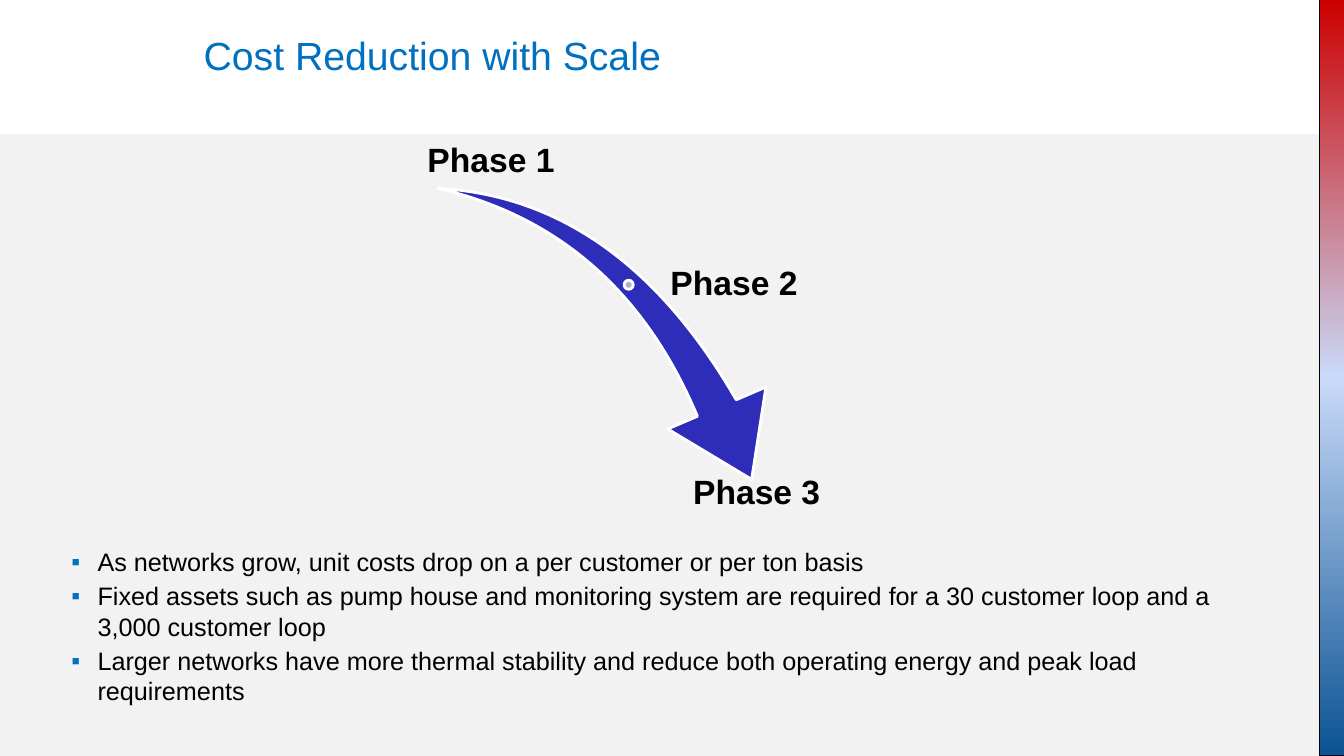
from copy import deepcopy
from dataclasses import dataclass

from lxml.etree import SubElement
from pptx import Presentation
from pptx.dml.color import RGBColor
from pptx.enum.shapes import MSO_SHAPE as Shape
from pptx.enum.text import MSO_ANCHOR as Anchor, MSO_AUTO_SIZE as AutoSize, PP_ALIGN as Align
from pptx.oxml.ns import qn
from pptx.util import Inches, Pt

BLACK = RGBColor(0x00, 0x00, 0x00)
WHITE = RGBColor(0xFF, 0xFF, 0xFF)
GREY = RGBColor(0xF2, 0xF2, 0xF2)
BLUE = RGBColor(0x00, 0x70, 0xC0)
ARROW = RGBColor(0x2D, 0x2D, 0xB9)
DOT = RGBColor(0xAD, 0xAD, 0xD9)
STRIPE = ((0, RGBColor(0xCC, 0x00, 0x00)),
          (0.5, RGBColor(0xC9, 0xDA, 0xF8)),
          (1, RGBColor(0x0B, 0x53, 0x94)))

Box = tuple[float, float, float, float]


@dataclass
class Phase:
    text: str
    box: Box
    anchor: Anchor
    align: Align


PHASES = (
    Phase("Phase 1", (4.01, 1.13, 1.72, 0.68), Anchor.BOTTOM, Align.CENTER),
    Phase("Phase 2", (6.62, 2.48, 2.05, 0.68), Anchor.MIDDLE, Align.LEFT),
    Phase("Phase 3", (6.34, 4.69, 2.33, 0.68), Anchor.TOP, Align.CENTER),
)
POINTS = (
    "As networks grow, unit costs drop on a per customer or per ton basis",
    "Fixed assets such as pump house and monitoring system are required "
    "for a 30 customer loop and a 3,000 customer loop",
    "Larger networks have more thermal stability and reduce both "
    "operating energy and peak load requirements",
)


def set_all(target, values: dict) -> None:
    for name, value in values.items():
        setattr(target, name, value)


def add_shape(s, kind: Shape, box: Box, fill: RGBColor | None = None,
              line: RGBColor | None = None, width: float = 2, rotation: float = 0):
    sp = s.shapes.add_shape(kind, *map(Inches, box))
    sp.shadow.inherit = False
    sp.rotation = rotation
    if fill is not None:
        sp.fill.solid()
        sp.fill.fore_color.rgb = fill
    if line is None:
        sp.line.fill.background()
    else:
        sp.line.color.rgb = line
        sp.line.width = Pt(width)
    return sp


def fill_stripe(sp) -> None:
    sp.fill.gradient()
    sp.fill.gradient_angle = 0
    stops = sp._element.spPr.find(qn("a:gradFill")).find(qn("a:gsLst"))
    stops.append(deepcopy(stops[0]))
    for stop, (position, color) in zip(sp.fill.gradient_stops, STRIPE):
        stop.color.rgb = color
    for gs, (position, color) in zip(stops, STRIPE):
        gs.set("pos", str(int(position * 100000)))


def add_text(s, box: Box, inset: tuple[float, float], frame: dict):
    tf = s.shapes.add_textbox(*map(Inches, box)).text_frame
    x, y = map(Inches, inset)
    set_all(tf, {"word_wrap": True, "margin_left": x, "margin_right": x,
                 "margin_top": y, "margin_bottom": y, **frame})
    return tf


def write(p, text: str, size: float, color: RGBColor, bold: bool = False) -> None:
    r = p.add_run()
    r.text = text
    set_all(r.font, {"name": "Arial", "size": Pt(size), "bold": bold})
    r.font.color.rgb = color


def add_bullet(p) -> None:
    pPr = p._p.get_or_add_pPr()
    indent = Inches(0.26)
    pPr.set("marL", str(indent))
    pPr.set("indent", str(-indent))
    p.space_after = Pt(3)
    color = SubElement(pPr, qn("a:buClr"))
    SubElement(color, qn("a:srgbClr")).set("val", str(BLUE))
    SubElement(pPr, qn("a:buFont")).set("typeface", "Arial")
    SubElement(pPr, qn("a:buChar")).set("char", "▪")


def main() -> None:
    prs = Presentation()
    set_all(prs, {"slide_width": Inches(13.33), "slide_height": Inches(7.5)})
    s = prs.slides.add_slide(prs.slide_layouts[6])

    add_shape(s, Shape.RECTANGLE, (0, 1.33, 13.33, 6.17), GREY)
    fill_stripe(add_shape(s, Shape.RECTANGLE, (9.46, 3.62, 7.5, 0.25),
                          line=BLACK, width=0.75, rotation=90))

    grow = {"auto_size": AutoSize.SHAPE_TO_FIT_TEXT}
    tf = add_text(s, (2.02, 0.31, 8.68, 0.47), (0, 0), grow)
    write(tf.paragraphs[0], "Cost Reduction with Scale", 28, BLUE)

    tf = add_text(s, (0.61, 5.37, 11.93, 2.04), (0.1, 0.05), grow)
    for i, point in enumerate(POINTS):
        p = tf.add_paragraph() if i else tf.paragraphs[0]
        add_bullet(p)
        write(p, point, 18, BLACK)

    arrow = add_shape(s, Shape.SWOOSH_ARROW, (4.26, 1.98, 3.66, 2.55), ARROW, WHITE, rotation=73.3)
    arrow.adjustments[0] = 0.163
    arrow.adjustments[1] = 0.314
    add_shape(s, Shape.OVAL, (6.19, 2.78, 0.09, 0.09), DOT, WHITE)

    for phase in PHASES:
        tf = add_text(s, phase.box, (0.03, 0.03), {"vertical_anchor": phase.anchor})
        p = tf.paragraphs[0]
        set_all(p, {"alignment": phase.align, "line_spacing": 0.9})
        write(p, phase.text, 24, BLACK, True)

    prs.save("out.pptx")


if __name__ == "__main__":
    main()
